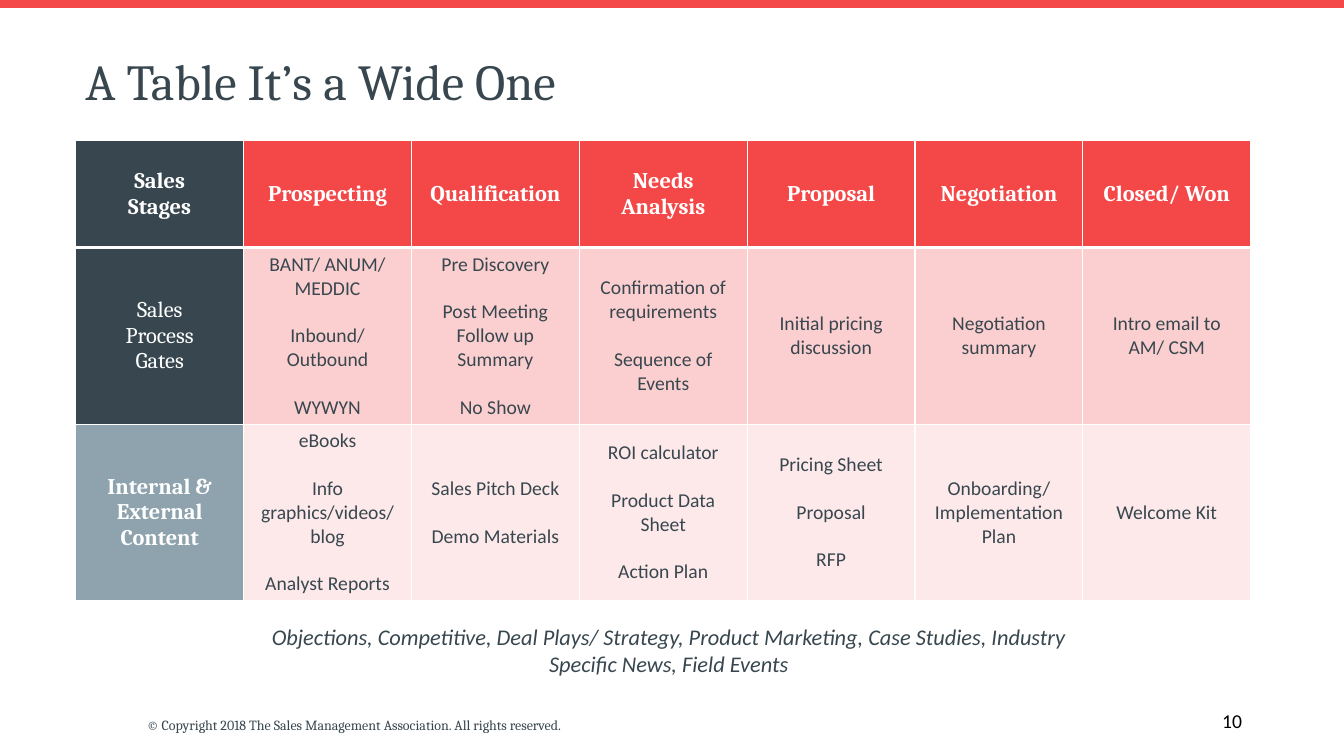
"""Build a slide with a wide table of sales stages."""
import pptx
import pptx.dml.color
import pptx.enum.shapes
import pptx.enum.text
import pptx.oxml
import pptx.util
from pptx.oxml.ns import nsdecls, qn
from pptx.util import Cm, Pt

COLORS = {"red": "F44747", "slate": "38474F", "steel": "8EA3AD", "rose": "FBCFCF",
          "blush": "FDE9E9", "white": "FFFFFF", "black": "000000"}
ALIGN = pptx.enum.text.PP_ALIGN
ANCHOR = pptx.enum.text.MSO_ANCHOR


def rgb(name):
    return pptx.dml.color.RGBColor.from_string(COLORS[name])


def write(frame, lines, color, align, gap=0, **format_values):
    frame.text = "\n".join(lines)
    for index, para in enumerate(frame.paragraphs):
        para.alignment = align
        if index and gap:
            para.space_before = Pt(gap)
        for span in para.runs:
            span.font.color.rgb = rgb(color)
            for name, value in format_values.items():
                setattr(span.font, name, value)


deck = pptx.Presentation()
deck.slide_width, deck.slide_height = Cm(33.87), Cm(19.05)
page = deck.slides.add_slide(deck.slide_layouts[5])

top_bar = page.shapes.add_connector(
    pptx.enum.shapes.MSO_CONNECTOR.STRAIGHT, 0, Cm(0.1), deck.slide_width, Cm(0.1))
top_bar.line.color.rgb = rgb("red")
top_bar.line.width = Pt(6)
top_bar._element.spPr.append(pptx.oxml.parse_xml(f"<a:effectLst {nsdecls('a')}/>"))

title = page.shapes.title
title.left, title.top, title.width, title.height = Cm(1.9), Cm(1.32), Cm(29.9), Cm(2.21)
title.text_frame.auto_size = pptx.enum.text.MSO_AUTO_SIZE.NONE
title.text_frame.vertical_anchor = ANCHOR.TOP
write(title.text_frame, ["A Table It’s a Wide One"], "slate", ALIGN.LEFT,
      name="Cambria", size=Pt(36))
title.text_frame.paragraphs[0].line_spacing = 0.9

notes = [
    ("© Copyright 2018 The Sales Management Association. All rights reserved.",
     (3.45, 17.93, 11.71, 0.69), False, ANCHOR.TOP, "slate", ALIGN.LEFT,
     {"name": "Cambria", "size": Pt(10)}),
    ("10", (23.93, 17.65, 7.62, 1.02), True, ANCHOR.MIDDLE, "black", ALIGN.RIGHT,
     {"name": "Calibri", "size": Pt(14)}),
    ("Objections, Competitive, Deal Plays/ Strategy, Product Marketing, Case Studies, "
     "Industry Specific News, Field Events",
     (6.43, 15.54, 20.85, 1.7), True, ANCHOR.MIDDLE, "slate", ALIGN.CENTER,
     {"name": "Calibri", "size": Pt(16), "italic": True}),
]
for text, place, wrap, anchor, color, align, format_values in notes:
    box = page.shapes.add_textbox(*map(Cm, place))
    box.text_frame.word_wrap = wrap
    box.text_frame.vertical_anchor = anchor
    write(box.text_frame, [text], color, align, **format_values)

rows = [
    [["Sales", "Stages"], ["Prospecting"], ["Qualification"], ["Needs Analysis"],
     ["Proposal"], ["Negotiation"], ["Closed/ Won"]],
    [["Sales", "Process", "Gates"],
     ["BANT/ ANUM/ MEDDIC", "Inbound/ Outbound", "WYWYN"],
     ["Pre Discovery", "Post Meeting Follow up Summary", "No Show"],
     ["Confirmation of requirements", "Sequence of Events"],
     ["Initial pricing discussion"], ["Negotiation summary"], ["Intro email to AM/ CSM"]],
    [["Internal & External Content"],
     ["eBooks", "Info graphics/videos/ blog", "Analyst Reports"],
     ["Sales Pitch Deck", "Demo Materials"],
     ["ROI calculator", "Product Data Sheet", "Action Plan"],
     ["Pricing Sheet", "Proposal", "RFP"],
     ["Onboarding/ Implementation Plan"], ["Welcome Kit"]],
]
row_heights = [2.7, 4.45, 4.45]
label_fills = ["slate", "slate", "steel"]
body_fills = ["red", "rose", "blush"]

table = page.shapes.add_table(3, 7, Cm(1.91), Cm(3.54), Cm(29.63), Cm(11.6)).table
table.first_row = table.horz_banding = False
for column in table.columns:
    column.width = Cm(4.23)

for r, row in enumerate(rows):
    table.rows[r].height = Cm(row_heights[r])
    for c, lines in enumerate(row):
        cell = table.cell(r, c)
        cell.vertical_anchor = ANCHOR.MIDDLE
        if r == 0 or c == 0:
            write(cell.text_frame, lines, "white", ALIGN.CENTER,
                  name="Cambria", size=Pt(16), bold=r != 1)
        else:
            write(cell.text_frame, lines, "slate", ALIGN.CENTER, gap=17,
                  name="Calibri", size=Pt(14), bold=False)
        cell.fill.solid()
        cell.fill.fore_color.rgb = rgb(body_fills[r] if c else label_fills[r])
        properties = cell._tc.get_or_add_tcPr()
        for index, side in enumerate(["lnL", "lnR", "lnT", "lnB"]):
            heavy = (r, side) in [(0, "lnB"), (1, "lnT")]
            border = pptx.oxml.parse_xml(
                f'<a:{side} {nsdecls("a")} w="{Pt(3 if heavy else 1)}"><a:solidFill>'
                f'<a:srgbClr val="{COLORS["white"]}"/></a:solidFill></a:{side}>')
            properties.insert(index, border)

deck.save("out.pptx")
